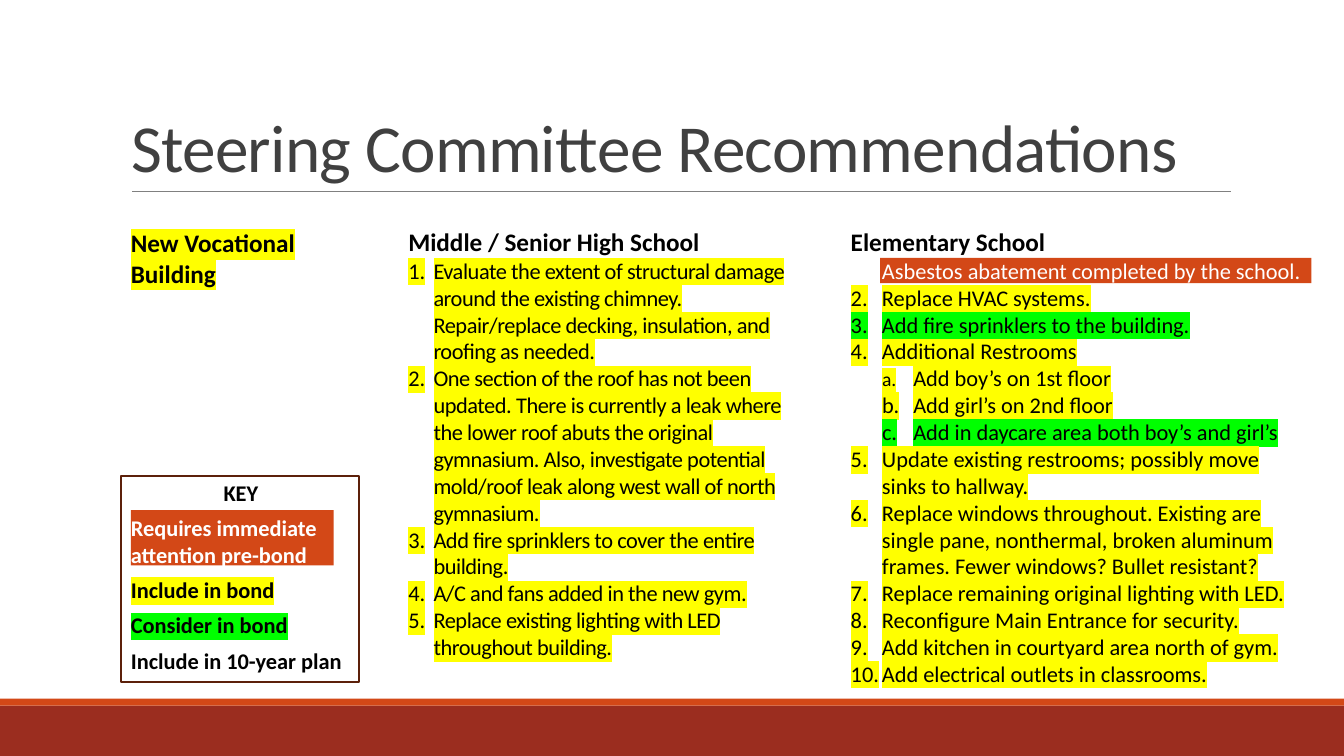
from dataclasses import dataclass
from typing import NamedTuple, Optional

from lxml.etree import SubElement as Sub
from pptx import Presentation
from pptx.dml.color import RGBColor
from pptx.enum.shapes import MSO_CONNECTOR as Link, MSO_SHAPE as Form
from pptx.enum.text import MSO_ANCHOR as Anchor, MSO_AUTO_SIZE as Fit, PP_ALIGN as Align
from pptx.oxml.ns import qn
from pptx.util import Emu, Inches, Pt

WIDE, HIGH = Inches(13.33), Inches(7.5)
FONT = "Calibri"
BLACK = RGBColor(0x00, 0x00, 0x00)
WHITE = RGBColor(0xFF, 0xFF, 0xFF)
DARK = RGBColor(0x40, 0x40, 0x40)
GRAY = RGBColor(0x80, 0x80, 0x80)
RUST = RGBColor(0x9B, 0x2D, 0x1F)
ORANGE = RGBColor(0xD3, 0x48, 0x17)
BROWN = RGBColor(0x5C, 0x20, 0x0A)
YELLOW = RGBColor(0xFF, 0xFF, 0x00)
GREEN = RGBColor(0x00, 0xFF, 0x00)


class Area(NamedTuple):
    """Left, top, width and height in percent of the slide."""
    x: float
    y: float
    w: float
    h: float


@dataclass
class Line:
    text: str
    mark: Optional[RGBColor] = None
    color: RGBColor = BLACK
    size: float = 16
    bold: bool = False
    start: int = 0        # number the list starts from, 0 for none
    level: int = 0
    label: str = ""       # typed label before a tab
    small: float = 16     # size of that label
    gap: float = 0
    align: Align = Align.LEFT


@dataclass
class Block:
    area: Area
    lines: list[Line]
    hang: float = 0       # hanging indent in inches
    track: float = 0      # letter spacing of list items in points


def across(part: float) -> Emu:
    return Emu(round(WIDE * part / 100))


def down(part: float) -> Emu:
    return Emu(round(HIGH * part / 100))


def place(shape, area: Area) -> None:
    shape.left, shape.top = across(area.x), down(area.y)
    shape.width, shape.height = across(area.w), down(area.h)


def add_bar(shapes, area: Area, fill: Optional[RGBColor], edge: Optional[RGBColor] = None) -> None:
    bar = shapes.add_shape(Form.RECTANGLE, across(area.x), down(area.y), across(area.w), down(area.h))
    bar.shadow.inherit = False
    if fill is None:
        bar.fill.background()
    else:
        bar.fill.solid()
        bar.fill.fore_color.rgb = fill
    if edge is None:
        bar.line.fill.background()
    else:
        bar.line.color.rgb = edge
        bar.line.width = Pt(1.25)


def add_rule(shapes, left: float, right: float, top: float) -> None:
    rule = shapes.add_connector(Link.STRAIGHT, across(left), down(top), across(right), down(top))
    rule.line.color.rgb = GRAY
    rule.line.width = Pt(0.5)
    Sub(rule.element.spPr, qn("a:effectLst"))


def add_run(para, text: str, mark: Optional[RGBColor], track: float) -> None:
    run = para.add_run()
    run.text = text
    props = run.font._element
    if track:
        props.set("spc", str(round(track * 100)))
    if mark is not None:
        Sub(Sub(props, qn("a:highlight")), qn("a:srgbClr")).set("val", str(mark))


def set_list(para, line: Line, hang: float) -> None:
    props = para._p.get_or_add_pPr()
    listed = line.start or line.label
    step = Inches(hang) if listed else 0
    props.set("marL", str(step * (line.level + 1)))
    props.set("indent", str(-step))
    if line.start:
        num = Sub(props, qn("a:buAutoNum"))
        num.set("type", "arabicPeriod")
        if line.start > 1:
            num.set("startAt", str(line.start))
    else:
        Sub(props, qn("a:buNone"))


def write(shape, block: Block) -> None:
    place(shape, block.area)
    frame = shape.text_frame
    frame.word_wrap = True
    frame.auto_size = Fit.NONE
    frame.vertical_anchor = Anchor.TOP
    for i, line in enumerate(block.lines):
        para = frame.paragraphs[0] if i == 0 else frame.add_paragraph()
        para.level = line.level
        set_list(para, line, block.hang)
        para.alignment = line.align
        para.space_before = Pt(line.gap)
        font = para.font
        font.name, font.size, font.bold = FONT, Pt(line.size), line.bold
        font.color.rgb = line.color
        track = block.track if line.start else 0
        if line.label and line.small != line.size:
            add_run(para, line.label, line.mark, track)
            para.runs[0].font.size = Pt(line.small)
            add_run(para, "\t" + line.text, line.mark, track)
        else:
            text = f"{line.label}\t{line.text}" if line.label else line.text
            add_run(para, text, line.mark, track)


def item(text: str, mark: Optional[RGBColor] = YELLOW, start: int = 1, color: RGBColor = BLACK) -> Line:
    return Line(text, mark, color, start=start)


def head(text: str, mark: Optional[RGBColor] = None) -> Line:
    return Line(text, mark, size=18, bold=True)


def key(text: str, mark: Optional[RGBColor] = None, color: RGBColor = BLACK) -> Line:
    return Line(text, mark, color, bold=True, gap=6)


SENIOR = Block(Area(29.63, 29.33, 30, 59.2), [
    head("Middle / Senior High School"),
    item("Evaluate the extent of structural damage around the existing chimney. "
         "Repair/replace decking, insulation, and roofing as needed."),
    item("One section of the roof has not been updated. There is currently a leak where "
         "the lower roof abuts the original gymnasium. Also, investigate potential "
         "mold/roof leak along west wall of north gymnasium."),
    item("Add fire sprinklers to cover the entire building."),
    item("A/C and fans added in the new gym."),
    item("Replace existing lighting with LED throughout building."),
], hang=0.25, track=-0.3)

JUNIOR = Block(Area(62.55, 29.33, 35.03, 62.8), [
    head("Elementary School"),
    item("Asbestos abatement completed by the school.", None, color=WHITE),
    item("Replace HVAC systems."),
    item("Add fire sprinklers to the building.", GREEN),
    item("Additional Restrooms"),
    Line("Add boy’s on 1st floor", YELLOW, level=1, label="a.", small=14),
    Line("Add girl’s on 2nd floor", YELLOW, level=1, label="b."),
    Line("Add in daycare area both boy’s and girl’s", GREEN, level=1, label="c."),
    item("Update existing restrooms; possibly move sinks to hallway.", start=5),
    item("Replace windows throughout. Existing are single pane, nonthermal, broken "
         "aluminum frames. Fewer windows? Bullet resistant?", start=5),
    item("Replace remaining original lighting with LED.", start=5),
    item("Reconfigure Main Entrance for security.", start=5),
    item("Add kitchen in courtyard area north of gym.", start=5),
    item("Add electrical outlets in classrooms.", start=5),
], hang=0.31)

NOTES = [
    Block(Area(9, 29.47, 18.6, 9.47), [head("New Vocational Building", YELLOW)]),
    Block(Area(9, 62.67, 17.85, 27.33), [
        Line("KEY", bold=True, align=Align.CENTER),
        key("Requires immediate attention pre-bond", color=WHITE),
        key("Include in bond", YELLOW),
        key("Consider in bond", GREEN),
        key("Include in 10-year plan"),
    ]),
]

BARS = [
    (Area(0, 93.33, 100, 6.67), RUST),
    (Area(0, 92.4, 100, 0.93), ORANGE),
    (Area(9.75, 67.47, 15.08, 7.33), ORANGE),
    (Area(65.48, 34.13, 32.1, 3.33), ORANGE),
]


def main() -> None:
    deck = Presentation()
    deck.slide_width, deck.slide_height = WIDE, HIGH
    slide = deck.slides.add_slide(deck.slide_layouts[3])
    shapes = slide.shapes
    title, left, right = slide.placeholders

    # Footer bands, title rule and orange marks
    for area, fill in BARS:
        add_bar(shapes, area, fill)
    add_rule(shapes, 9.83, 91.58, 25.33)

    # Placeholders go in front of the marks
    for holder in (title, left, right):
        holder.element.getparent().append(holder.element)

    # Title
    place(title, Area(9, 4.13, 82.5, 21.2))
    frame = title.text_frame
    frame.auto_size, frame.vertical_anchor = Fit.NONE, Anchor.BOTTOM
    para = frame.paragraphs[0]
    para.alignment, para.line_spacing = Align.LEFT, 0.85
    para.font.name, para.font.size = FONT, Pt(48)
    para.font.color.rgb = DARK
    add_run(para, "Steering Committee Recommendations", None, -0.5)

    # School lists, side note and key
    write(left, SENIOR)
    write(right, JUNIOR)
    for note in NOTES:
        write(shapes.add_textbox(0, 0, 0, 0), note)
    add_bar(shapes, Area(9, 62.93, 17.7, 27.33), None, BROWN)

    deck.save("out.pptx")


if __name__ == "__main__":
    main()
